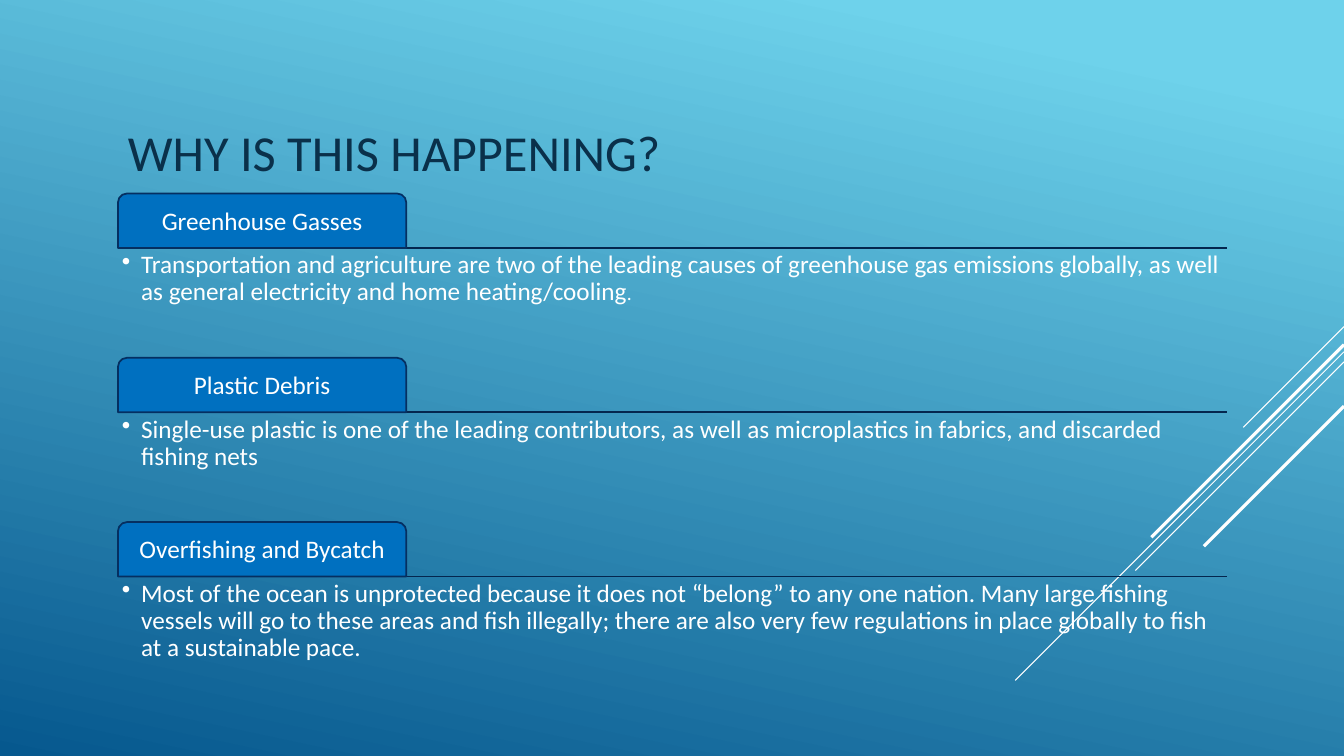
from lxml import etree
from pptx import Presentation
from pptx.dml.color import RGBColor
from pptx.enum.shapes import MSO_CONNECTOR, MSO_SHAPE
from pptx.enum.text import MSO_ANCHOR, PP_ALIGN
from pptx.oxml.ns import qn
from pptx.util import Inches, Pt

STRAIGHT = MSO_CONNECTOR.STRAIGHT
TAB_SHAPE = MSO_SHAPE.ROUND_2_SAME_RECTANGLE
TOP, MIDDLE = MSO_ANCHOR.TOP, MSO_ANCHOR.MIDDLE
LEFT, CENTER = PP_ALIGN.LEFT, PP_ALIGN.CENTER

SKY = RGBColor(0x6E, 0xD2, 0xEB)
DEEP_SEA = RGBColor(0x06, 0x58, 0x8E)
WHITE = RGBColor(0xFF, 0xFF, 0xFF)
TITLE_NAVY = RGBColor(0x0A, 0x30, 0x4A)
RULE_NAVY = RGBColor(0x04, 0x26, 0x4E)
TAB_BLUE = RGBColor(0x00, 0x70, 0xC0)
TAB_EDGE = RGBColor(0x05, 0x2F, 0x61)

FONT = "Calibri"
MARGIN, CONTENT_WIDTH = 1.17, 11
FIRST_TAB_TOP, ROW_PITCH = 1.92, 1.63
TAB_WIDTH, TAB_HEIGHT, BODY_HEIGHT = 2.86, 0.54, 1.07
INSET, HANGING = 0.04, 0.19
PAGE_RIGHT = 13.33

# Diagonal strokes: y at the right edge, length along each axis, weight
STROKES = [
    (3.24, 1.00, 0.75),
    (3.49, 3.26, 0.75),
    (3.59, 2.07, 0.75),
    (3.42, 1.91, 2.25),
    (4.03, 1.39, 2.25),
]

# Each cause: tab label, then spans of text with their sizes
CAUSES = [
    ("Greenhouse Gasses", [
        ("Transportation and agriculture are two of the leading causes of "
         "greenhouse gas emissions globally, as well as general electricity "
         "and home heating/cooling", 18),
        (".", 14)]),
    ("Plastic Debris", [
        ("Single-use plastic is one of the leading contributors, as well as "
         "microplastics in fabrics, and discarded fishing nets", 18)]),
    ("Overfishing and Bycatch", [
        ("Most of the ocean is unprotected because it does not “belong” to any "
         "one nation. Many large fishing vessels will go to these areas and "
         "fish illegally; there are also very few regulations in place "
         "globally to fish at a sustainable pace.", 18)]),
]


def paint_background(page):
    fill = page.background.fill
    fill.gradient()
    fill.gradient_angle = 258
    for stop, position, color in zip(fill.gradient_stops, (0.1, 1), (SKY, DEEP_SEA)):
        stop.position = position
        stop.color.rgb = color


def add_line(page, start, end, color, weight):
    line = page.shapes.add_connector(
        STRAIGHT, *(Inches(value) for value in (*start, *end)))
    line.line.color.rgb = color
    line.line.width = Pt(weight)
    properties = line.element.find(qn("p:spPr"))
    etree.SubElement(properties, qn("a:effectLst"))


def add_bullet(para):
    properties = para._p.get_or_add_pPr()
    properties.set("marL", str(Inches(HANGING)))
    properties.set("indent", str(-Inches(HANGING)))
    etree.SubElement(properties, qn("a:buChar"), char="•")


def write_text(shape, spans, color=WHITE, align=LEFT, anchor=TOP,
               inset=INSET, spacing=0.9, bullet=False):
    frame = shape.text_frame
    frame.word_wrap = True
    frame.vertical_anchor = anchor
    frame.margin_left = frame.margin_right = Inches(inset)
    frame.margin_top = frame.margin_bottom = Inches(INSET)
    para = frame.paragraphs[0]
    if bullet:
        add_bullet(para)
    para.alignment = align
    para.line_spacing = spacing
    for text, size in spans:
        span = para.add_run()
        span.text = text
        span.font.name = FONT
        span.font.size = Pt(size)
        span.font.color.rgb = color


def add_text_box(page, left, top, width, height, spans, **text_format):
    box = page.shapes.add_textbox(
        Inches(left), Inches(top), Inches(width), Inches(height))
    write_text(box, spans, **text_format)


def add_tab(page, top, label):
    tab = page.shapes.add_shape(
        TAB_SHAPE, Inches(MARGIN), Inches(top), Inches(TAB_WIDTH), Inches(TAB_HEIGHT))
    tab.shadow.inherit = False
    tab.fill.solid()
    tab.fill.fore_color.rgb = TAB_BLUE
    tab.line.color.rgb = TAB_EDGE
    tab.line.width = Pt(1.25)
    write_text(tab, [(label, 18)], align=CENTER, anchor=MIDDLE)


def add_cause(page, top, label, spans):
    rule_y = top + TAB_HEIGHT
    add_line(page, (MARGIN, rule_y), (MARGIN + CONTENT_WIDTH, rule_y), RULE_NAVY, 1.25)
    add_tab(page, top, label)
    add_text_box(page, MARGIN, rule_y, CONTENT_WIDTH, BODY_HEIGHT, spans, bullet=True)


def main():
    deck = Presentation()
    deck.slide_width, deck.slide_height = Inches(PAGE_RIGHT), Inches(7.5)
    page = deck.slides.add_slide(deck.slide_layouts[6])

    # Backdrop with diagonal strokes
    paint_background(page)
    for y, reach, weight in STROKES:
        add_line(page, (PAGE_RIGHT, y), (PAGE_RIGHT - reach, y + reach), WHITE, weight)

    # Title
    add_text_box(page, MARGIN, 0.75, CONTENT_WIDTH, 1.5,
                 [("WHY IS THIS HAPPENING?", 36)],
                 color=TITLE_NAVY, anchor=MIDDLE, inset=0.1, spacing=1)

    # Causes, one row each
    for row, (label, spans) in enumerate(CAUSES):
        add_cause(page, FIRST_TAB_TOP + row * ROW_PITCH, label, spans)

    deck.save("out.pptx")


if __name__ == "__main__":
    main()
